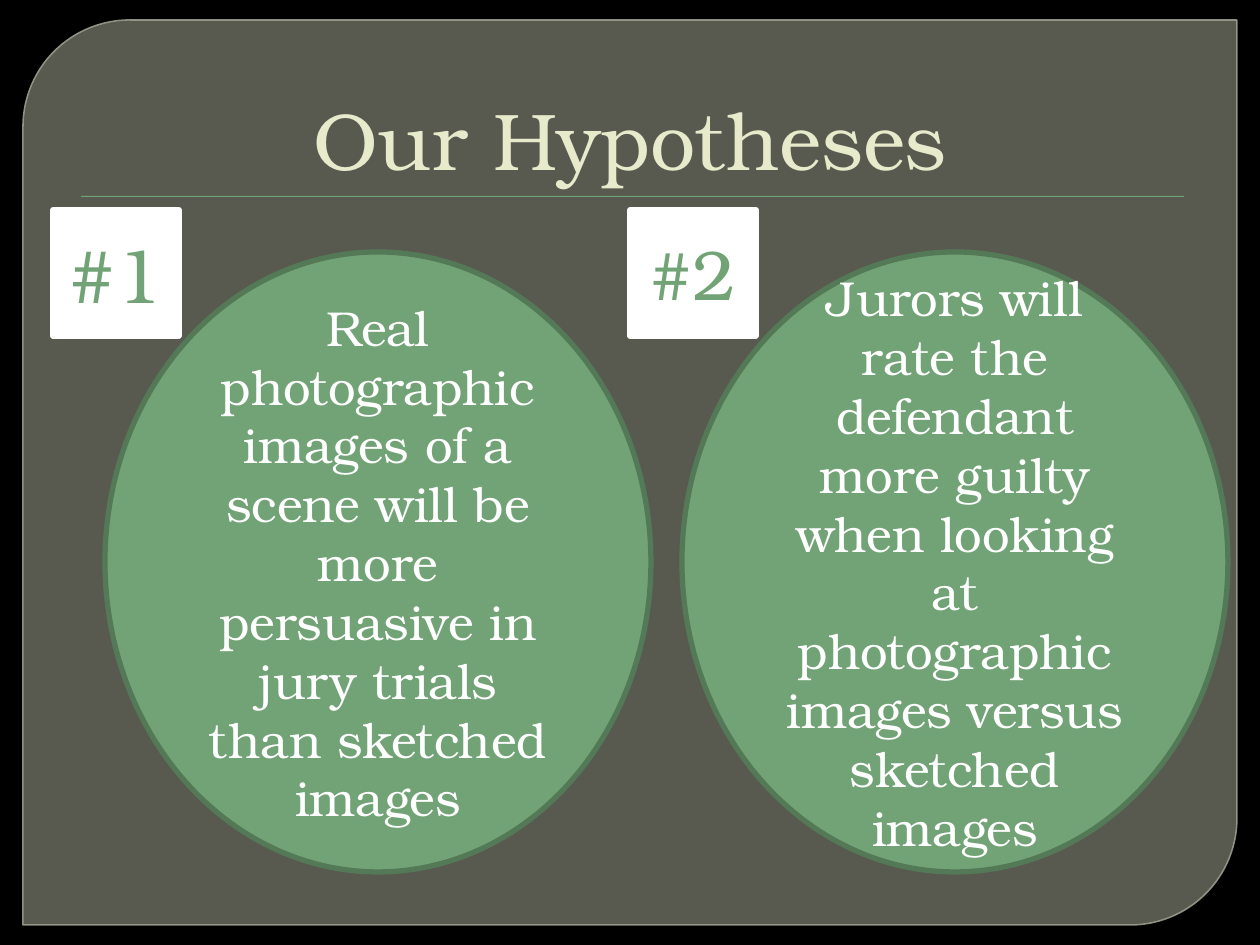
"""Build the hypotheses slide with two numbered ovals."""
import dataclasses

import lxml.etree
import pptx
import pptx.dml.color
import pptx.enum.shapes
import pptx.enum.text
import pptx.oxml.ns
import pptx.util

EMU_PER_PX = 914400 // 126
FONT = "TeX Gyre Bonum"
GREEN = "72A376"
WHITE = "FFFFFF"
SHAPES = pptx.enum.shapes.MSO_SHAPE
ANCHORS = pptx.enum.text.MSO_ANCHOR


@dataclasses.dataclass
class Hypothesis:
    """One numbered hypothesis and its horizontal offset in px."""
    label: str
    label_size: int
    statement: str
    offset: int


HYPOTHESES = [
    Hypothesis("#1", 44, "Real photographic images of a scene will be more "
               "persuasive in jury trials than sketched images", 0),
    Hypothesis("#2", 40, "Jurors will rate the defendant more guilty when looking at "
               "photographic images versus sketched images", 577),
]


def px(*lengths: int) -> list[int]:
    """Turn px lengths into EMU."""
    return [length * EMU_PER_PX for length in lengths]


def rgb(value: str) -> pptx.dml.color.RGBColor:
    """Turn a hex string into a colour."""
    return pptx.dml.color.RGBColor.from_string(value)


def set_alpha(fill_format, percent: int) -> None:
    """Make a solid fill partly transparent."""
    colour = fill_format._xPr.find(".//" + pptx.oxml.ns.qn("a:srgbClr"))
    lxml.etree.SubElement(colour, pptx.oxml.ns.qn("a:alpha"), val=str(percent * 1000))


def add_block(page, kind, place: tuple, fill: str, line: str = "", width: float = 0):
    """Draw a filled shape with an optional outline."""
    block = page.shapes.add_shape(kind, *px(*place))
    block.shadow.inherit = False
    block.fill.solid()
    block.fill.fore_color.rgb = rgb(fill)
    if line:
        block.line.color.rgb = rgb(line)
        block.line.width = pptx.util.Pt(width)
    else:
        block.line.fill.background()
    return block


def write_text(box, text: str, size: int, colour: str, anchor=ANCHORS.MIDDLE) -> None:
    """Write one centred paragraph into a shape or text box."""
    frame = box.text_frame
    for name, value in {"word_wrap": True, "vertical_anchor": anchor}.items():
        setattr(frame, name, value)
    para = frame.paragraphs[0]
    para.alignment = pptx.enum.text.PP_ALIGN.CENTER
    span = para.add_run()
    span.text = text
    for name, value in {"name": FONT, "size": pptx.util.Pt(size)}.items():
        setattr(span.font, name, value)
    span.font.color.rgb = rgb(colour)


def add_panel(page) -> None:
    """Draw the translucent panel and the rule under the title."""
    panel = add_block(page, SHAPES.ROUND_2_DIAG_RECTANGLE, (23, 20, 1214, 905),
                      "888B7B", "9DA090", 0.87)
    panel.adjustments[0] = 0.118
    panel.adjustments[1] = 0
    set_alpha(panel.fill, 65)
    set_alpha(panel.line.fill, 88)
    add_block(page, SHAPES.RECTANGLE, (81, 196, 1103, 1), GREEN)


def main() -> None:
    """Build and save the deck."""
    deck = pptx.Presentation()
    deck.slide_width, deck.slide_height = px(1260, 945)
    page = deck.slides.add_slide(deck.slide_layouts[6])
    page.background.fill.solid()
    page.background.fill.fore_color.rgb = rgb("000000")
    add_panel(page)
    title = page.shapes.add_textbox(*px(63, 35, 1134, 158))
    write_text(title, "Our Hypotheses", 46, "E7EACB", ANCHORS.BOTTOM)
    for item in HYPOTHESES:
        oval = add_block(page, SHAPES.OVAL, (105 + item.offset, 252, 546, 620),
                         GREEN, "547957", 3)
        write_text(oval, item.statement, 28, WHITE)
    for item in HYPOTHESES:
        badge = add_block(page, SHAPES.RECTANGLE, (53 + item.offset, 210, 126, 126),
                          WHITE, WHITE, 3)
        write_text(badge, item.label, item.label_size, GREEN)
    deck.save("out.pptx")


if __name__ == "__main__":
    main()
